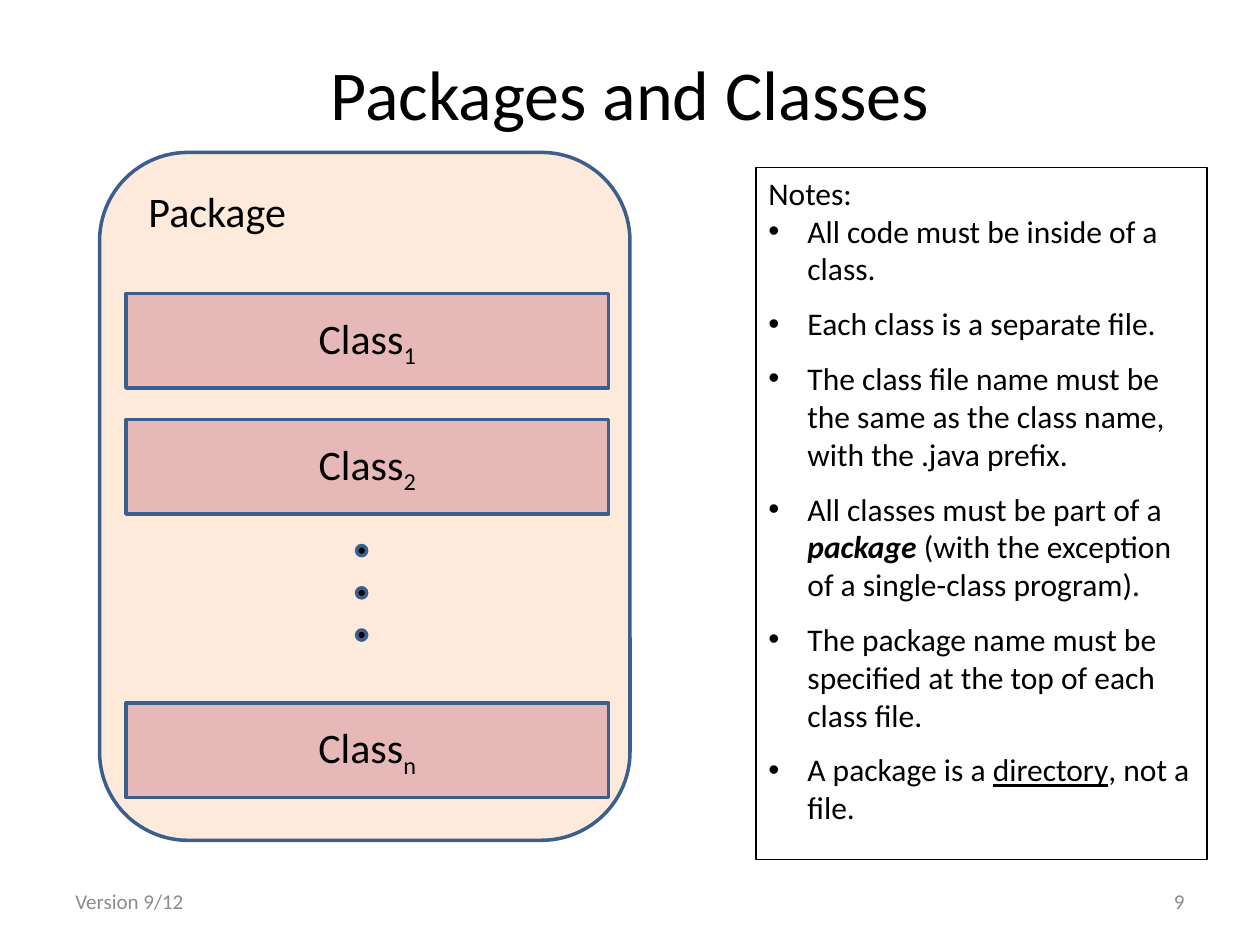
from dataclasses import dataclass

from lxml.etree import SubElement
from pptx import Presentation
from pptx.dml.color import RGBColor
from pptx.enum.shapes import MSO_SHAPE as Shape
from pptx.enum.text import MSO_ANCHOR as Anchor, PP_ALIGN as Align
from pptx.oxml.ns import qn
from pptx.util import Inches, Pt

COLORS = {
    "text": "000000",
    "footer": "8C8C8C",
    "package": "FDEADA",
    "class": "E6B9B8",
    "outline": "3A5F8C",
}


@dataclass
class Box:
    left: float
    top: float
    width: float
    height: float

    def inches(self) -> list:
        return [Inches(v) for v in (self.left, self.top, self.width, self.height)]


@dataclass
class ClassBar:
    subscript: str
    top: float


@dataclass
class Note:
    before: str
    emphasis: str = ""
    after: str = ""
    style: str = ""


@dataclass
class Label:
    text: str
    box: Box
    size: float
    color: str = "text"
    align: Align = Align.LEFT
    anchor: Anchor = Anchor.TOP


CLASS_BARS = [ClassBar("1", 2.33), ClassBar("2", 3.33), ClassBar("n", 5.58)]
DOT_TOP, DOT_STEP, DOT_COUNT = 4.33, 0.335, 3
LABELS = [
    Label("Package", Box(1.08, 1.42, 1.42, 0.5), 24),
    Label("Version 9/12", Box(0.5, 6.95, 2.33, 0.4), 12, "footer",
          anchor=Anchor.MIDDLE),
    Label("9", Box(7.17, 6.95, 2.33, 0.4), 12, "footer", Align.RIGHT,
          Anchor.MIDDLE),
]
NOTES = [
    Note("All code must be inside of a class."),
    Note("Each class is a separate file."),
    Note("The class file name must be the same as the class name, "
         "with the .java prefix."),
    Note("All classes must be part of a ", "package",
         " (with the exception of a single-class program).", "bold italic"),
    Note("The package name must be specified at the top of each class file."),
    Note("A package is a ", "directory", ", not a file.", "underline"),
]


def rgb(name: str) -> RGBColor:
    return RGBColor.from_string(COLORS[name])


def format_runs(paragraph, size: float, color: str = "text") -> None:
    for run in paragraph.runs:
        run.font.name = "Calibri"
        run.font.size = Pt(size)
        run.font.color.rgb = rgb(color)


def draw_shape(slide, kind: Shape, box: Box, fill: str):
    shape = slide.shapes.add_shape(kind, *box.inches())
    shape.shadow.inherit = False
    shape.fill.solid()
    shape.fill.fore_color.rgb = rgb(fill)
    shape.line.color.rgb = rgb("outline")
    shape.line.width = Pt(2)
    return shape


def draw_class(slide, bar: ClassBar) -> None:
    rectangle = draw_shape(slide, Shape.RECTANGLE,
                           Box(1, bar.top, 3.83, 0.75), "class")
    rectangle.text_frame.vertical_anchor = Anchor.MIDDLE
    paragraph = rectangle.text_frame.paragraphs[0]
    paragraph.text = "Class"
    paragraph.alignment = Align.CENTER
    subscript = paragraph.add_run()
    subscript.text = bar.subscript
    format_runs(paragraph, 24)
    subscript._r.get_or_add_rPr().set("baseline", "-25000")


def draw_label(slide, label: Label) -> None:
    frame = slide.shapes.add_textbox(*label.box.inches()).text_frame
    frame.word_wrap = True
    frame.vertical_anchor = label.anchor
    frame.text = label.text
    frame.paragraphs[0].alignment = label.align
    format_runs(frame.paragraphs[0], label.size, label.color)


def add_bullet(paragraph) -> None:
    properties = paragraph._p.get_or_add_pPr()
    properties.set("marL", str(Inches(0.31)))
    properties.set("indent", str(Inches(-0.31)))
    SubElement(properties, qn("a:buFont")).set("typeface", "Arial")
    SubElement(properties, qn("a:buChar")).set("char", "•")


def add_note(frame, note: Note, gap: float) -> None:
    paragraph = frame.add_paragraph()
    paragraph.text = note.before
    paragraph.space_before = Pt(gap)
    add_bullet(paragraph)
    if note.emphasis:
        emphasis, after = paragraph.add_run(), paragraph.add_run()
        emphasis.text, after.text = note.emphasis, note.after
        emphasis.font.bold = "bold" in note.style
        emphasis.font.italic = "italic" in note.style
        emphasis.font.underline = "underline" in note.style
    format_runs(paragraph, 18)


def draw_notes(slide) -> None:
    panel = slide.shapes.add_textbox(*Box(6, 1.33, 3.58, 5.49).inches())
    panel.line.color.rgb = rgb("text")
    panel.line.width = Pt(0.75)
    frame = panel.text_frame
    frame.word_wrap = True
    frame.text = "Notes:"
    format_runs(frame.paragraphs[0], 18)
    for index, note in enumerate(NOTES):
        add_note(frame, note, 9.75 if index else 0)


def draw_title(slide) -> None:
    title = slide.shapes.title
    title.left, title.top, title.width, title.height = Box(0.5, 0.3, 9, 0.87).inches()
    title.text_frame.text = "Packages and Classes"
    title.text_frame.vertical_anchor = Anchor.MIDDLE
    title.text_frame.paragraphs[0].alignment = Align.CENTER
    format_runs(title.text_frame.paragraphs[0], 40)


def main() -> None:
    deck = Presentation()
    deck.slide_width, deck.slide_height = Inches(10), Inches(7.5)
    slide = deck.slides.add_slide(deck.slide_layouts[5])
    draw_title(slide)
    draw_shape(slide, Shape.ROUNDED_RECTANGLE, Box(0.79, 1.21, 4.21, 5.46), "package")
    for bar in CLASS_BARS:
        draw_class(slide, bar)
    for index in range(DOT_COUNT):
        dot = Box(2.83, DOT_TOP + index * DOT_STEP, 0.08, 0.08)
        draw_shape(slide, Shape.OVAL, dot, "text")
    for label in LABELS:
        draw_label(slide, label)
    draw_notes(slide)
    deck.save("out.pptx")


if __name__ == "__main__":
    main()
